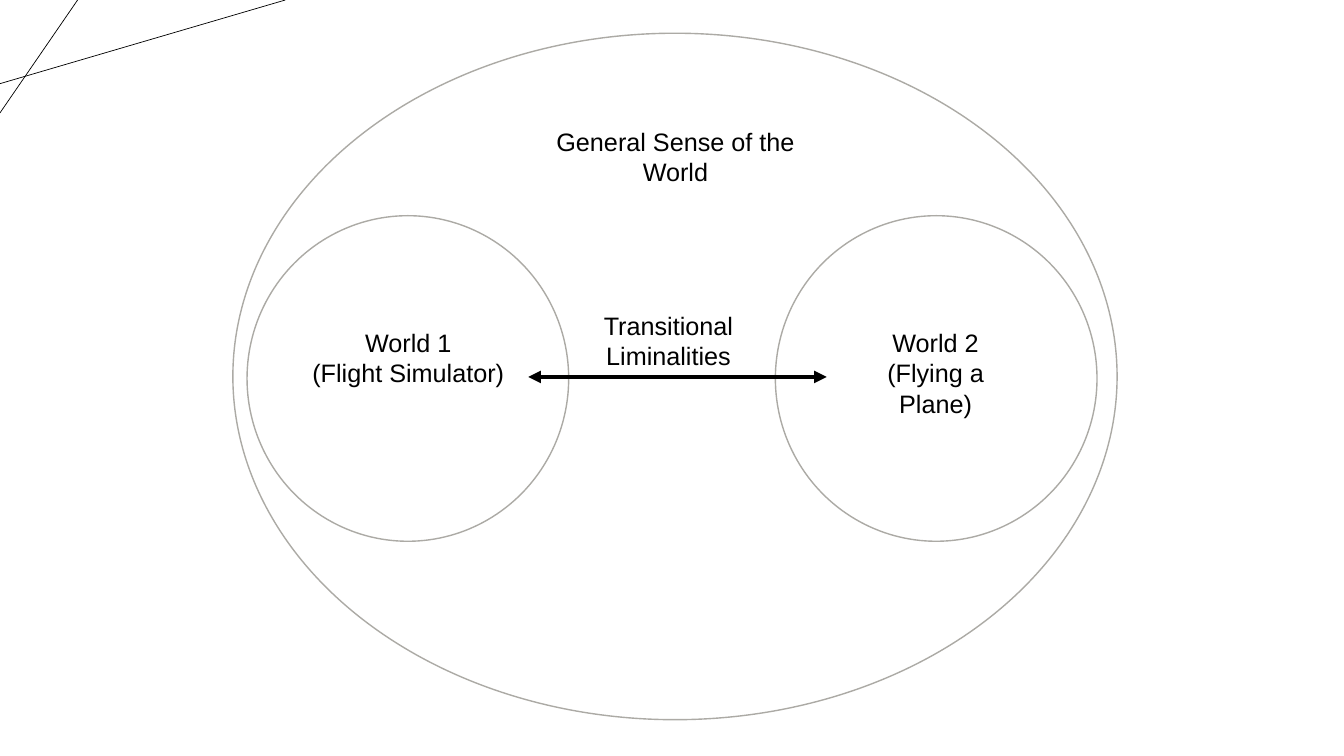
from lxml import etree
from pptx import Presentation
from pptx.dml.color import RGBColor
from pptx.enum.shapes import MSO_CONNECTOR, MSO_SHAPE
from pptx.enum.text import MSO_ANCHOR, PP_ALIGN
from pptx.oxml.ns import qn
from pptx.util import Inches, Pt

BLACK = RGBColor(0x00, 0x00, 0x00)
GRAY = RGBColor(0xAC, 0xAA, 0xA5)
OVAL = MSO_SHAPE.OVAL
STRAIGHT = MSO_CONNECTOR.STRAIGHT
CENTER = PP_ALIGN.CENTER
TOP = MSO_ANCHOR.TOP


class Board:
    font = "Arial"
    size = Pt(18)

    def __init__(self, slide):
        self.slide = slide

    def line(self, start, end, width, arrows=False):
        points = [Inches(v) for v in (*start, *end)]
        line = self.slide.shapes.add_connector(STRAIGHT, *points)
        line.line.color.rgb = BLACK
        line.line.width = Pt(width)
        props = line._element.spPr
        if arrows:
            for end_tag in ("a:headEnd", "a:tailEnd"):
                etree.SubElement(props.find(qn("a:ln")), qn(end_tag), type="triangle")
        etree.SubElement(props, qn("a:effectLst"))

    def oval(self, *box):
        oval = self.slide.shapes.add_shape(OVAL, *[Inches(v) for v in box])
        oval.shadow.inherit = False
        oval.fill.background()
        oval.line.color.rgb = GRAY
        oval.line.width = Pt(1)

    def label(self, box, *rows):
        frame = self.slide.shapes.add_textbox(*[Inches(v) for v in box]).text_frame
        frame.word_wrap = True
        frame.vertical_anchor = TOP
        for i, row in enumerate(rows):
            para = frame.add_paragraph() if i else frame.paragraphs[0]
            para.alignment = CENTER
            run = para.add_run()
            run.text = row
            run.font.name = self.font
            run.font.size = self.size
            run.font.color.rgb = BLACK


def main():
    deck = Presentation()
    deck.slide_width = Inches(13.33)
    deck.slide_height = Inches(7.5)
    board = Board(deck.slides.add_slide(deck.slide_layouts[6]))

    board.line((0, 0.83), (2.83, 0), 0.5)
    board.line((0.77, 0), (0, 1.12), 0.5)

    worlds = [
        (2.45, (2.98, 3.2, 2.14, 0.71), "World 1", "(Flight Simulator)"),
        (7.69, (8.33, 3.2, 1.9, 0.71), "World 2", "(Flying a Plane)"),
    ]
    for left, box, name, detail in worlds:
        board.oval(left, 2.14, 3.19, 3.23)
        board.label(box, name, detail)

    board.line((5.24, 3.74), (8.2, 3.74), 3, arrows=True)
    board.label((5.87, 3.03, 1.52, 0.71), "Transitional", "Liminalities")

    board.oval(2.31, 0.33, 8.77, 6.81)
    board.label((5.13, 1.2, 3.14, 0.4), "General Sense of the World")

    deck.save("out.pptx")


if __name__ == "__main__":
    main()
